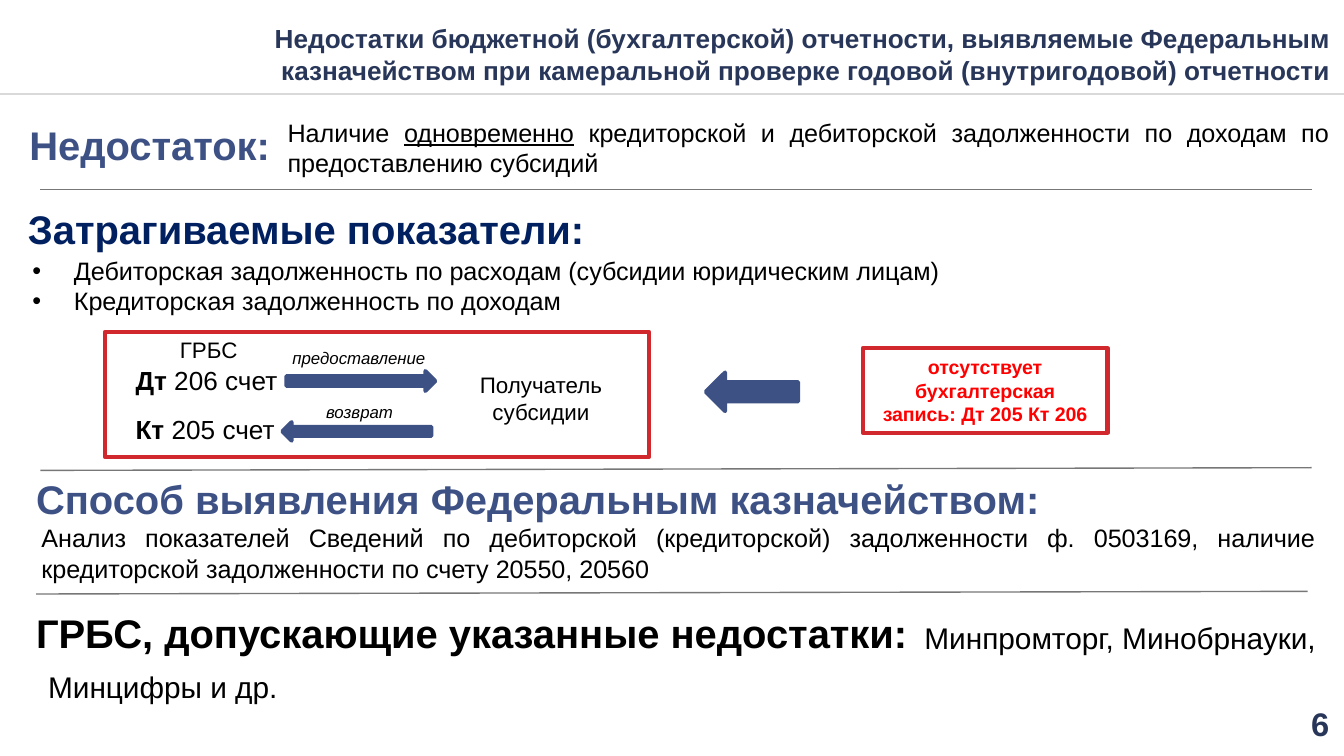
from dataclasses import dataclass

from lxml import etree
from pptx import Presentation
from pptx.dml.color import RGBColor
from pptx.enum.shapes import MSO_CONNECTOR, MSO_SHAPE as Shape
from pptx.enum.text import MSO_ANCHOR as Anchor, PP_ALIGN as Align
from pptx.oxml.ns import qn
from pptx.util import Inches, Pt


@dataclass(frozen=True)
class Theme:
    font: str = "Arial"
    black: str = "000000"
    white: str = "FFFFFF"
    blue: str = "3D5185"
    navy: str = "002060"
    header: str = "283659"
    frame: str = "D1282E"
    alert: str = "FF0000"
    rule: str = "777777"
    header_rule: str = "D9D9D9"
    heading_size: float = 21.4
    number_size: float = 17.5
    list_size: float = 16
    header_size: float = 14
    body_size: float = 13.5
    label_size: float = 12
    alert_size: float = 10.5
    caption_size: float = 9


THEME = Theme()


def color(value):
    return RGBColor.from_string(value)


def write_text(frame, *paragraphs, size=THEME.body_size, fill=THEME.black, bold=False,
               italic=False, align=Align.LEFT, bullet=False):
    """Each paragraph is a string or a list of (text, font overrides) runs."""
    for index, content in enumerate(paragraphs):
        paragraph = frame.paragraphs[0] if index == 0 else frame.add_paragraph()
        paragraph.alignment = align
        if bullet:
            properties = paragraph._p.get_or_add_pPr()
            properties.set("marL", str(Inches(0.31)))
            properties.set("indent", str(-Inches(0.31)))
            etree.SubElement(properties, qn("a:buFont")).set("typeface", THEME.font)
            etree.SubElement(properties, qn("a:buChar")).set("char", "•")
        runs = [(content, {})] if isinstance(content, str) else content
        for text, overrides in runs:
            run = paragraph.add_run()
            run.text = text
            font = run.font
            font.name, font.size = THEME.font, Pt(size)
            font.bold, font.italic = bold, italic
            font.color.rgb = color(fill)
            for name, value in overrides.items():
                setattr(font, name, value)


class SlideBuilder:
    def __init__(self, slide, theme):
        self.slide = slide
        self.theme = theme

    def text(self, left, top, width, height, *paragraphs, inset=True, wrap=True, **style):
        box = self.slide.shapes.add_textbox(
            Inches(left), Inches(top), Inches(width), Inches(height))
        frame = box.text_frame
        frame.word_wrap = wrap
        if not inset:
            frame.margin_left = frame.margin_top = 0
            frame.margin_right = frame.margin_bottom = 0
        write_text(frame, *paragraphs, **style)

    def heading(self, left, top, width, text, fill, wrap=True):
        self.text(left, top, width, 0.46, text, wrap=wrap,
                  size=self.theme.heading_size, fill=fill, bold=True)

    def rule(self, x1, y1, x2, y2, stroke, width=0.75):
        line = self.slide.shapes.add_connector(
            MSO_CONNECTOR.STRAIGHT, Inches(x1), Inches(y1), Inches(x2), Inches(y2))
        line.line.color.rgb = color(stroke)
        line.line.width = Pt(width)
        etree.SubElement(line._element.spPr, qn("a:effectLst"))

    def shape(self, kind, left, top, width, height, stroke, line_width, fill=None):
        shape = self.slide.shapes.add_shape(
            kind, Inches(left), Inches(top), Inches(width), Inches(height))
        shape.shadow.inherit = False
        shape.line.color.rgb = color(stroke)
        shape.line.width = Pt(line_width)
        if fill:
            shape.fill.solid()
            shape.fill.fore_color.rgb = color(fill)
        else:
            shape.fill.background()
        return shape

    def arrow(self, kind, left, top, width, height, rotation=0):
        shape = self.shape(kind, left, top, width, height, self.theme.blue, 2, self.theme.blue)
        shape.rotation = rotation

    def frame(self, left, top, width, height, fill=None):
        return self.shape(Shape.RECTANGLE, left, top, width, height,
                          self.theme.frame, 2.25, fill)


def add_header(builder):
    builder.rule(0, 0.7, 10, 0.7, THEME.header_rule, 1)
    builder.text(0.92, 0.12, 9.08, 0.57,
                 "Недостатки бюджетной (бухгалтерской) отчетности, выявляемые Федеральным "
                 "казначейством при камеральной проверке годовой (внутригодовой) отчетности",
                 size=THEME.header_size, fill=THEME.header, bold=True, align=Align.RIGHT)
    builder.text(9.67, 5.24, 0.22, 0.29, "6", inset=False, size=THEME.number_size,
                 fill=THEME.header, bold=True, align=Align.RIGHT)


def add_sections(builder):
    for left, start, right, end in ((0.3, 1.41, 9.76, 1.41), (0.3, 3.5, 9.76, 3.48),
                                    (0.27, 4.42, 9.73, 4.4)):
        builder.rule(left, start, right, end, THEME.rule)

    builder.heading(0.12, 0.85, 2.04, "Недостаток:", THEME.blue)
    builder.text(2.14, 0.87, 7.75, 0.32,
                 [("Наличие ", {}), ("одновременно", {"underline": True}),
                  (" кредиторской и дебиторской задолженности по доходам "
                   "по предоставлению субсидий", {})],
                 inset=False, align=Align.JUSTIFY)

    builder.heading(0.11, 1.47, 5.08, "Затрагиваемые показатели:", THEME.navy)
    builder.text(0.24, 1.9, 9.52, 0.46,
                 "Дебиторская задолженность по расходам (субсидии юридическим лицам)",
                 "Кредиторская задолженность по доходам",
                 inset=False, bullet=True)

    builder.heading(0.17, 3.48, 7.75, "Способ выявления Федеральным казначейством:",
                    THEME.blue, wrap=False)
    builder.text(0.21, 3.84, 9.68, 0.56,
                 "Анализ показателей Сведений по дебиторской (кредиторской) задолженности "
                 "ф. 0503169, наличие кредиторской задолженности по счету 20550, 20560",
                 align=Align.JUSTIFY)

    builder.heading(0.17, 4.48, 6.76, "ГРБС, допускающие указанные недостатки:",
                    THEME.black, wrap=False)
    builder.text(6.78, 4.56, 3.22, 0.37, "Минпромторг, Минобрнауки,", size=THEME.list_size)
    builder.text(0.26, 4.93, 5.12, 0.37, "Минцифры и др.", size=THEME.list_size)


def add_subsidy_scheme(builder):
    builder.frame(0.78, 2.47, 4.05, 0.93)
    builder.text(1.24, 2.45, 0.7, 0.3, "ГРБС", size=THEME.label_size)
    builder.text(3.37, 2.71, 1.31, 0.5, "Получатель субсидии",
                 size=THEME.label_size, align=Align.CENTER)
    for top, side, account in ((2.66, "Дт", "206"), (3.03, "Кт", "205")):
        builder.text(0.91, top, 1.38, 0.34,
                     [(side, {"bold": True}), (f" {account} счет", {})],
                     size=THEME.header_size)
    for left, top, width, caption in ((2.06, 2.54, 1.22, "предоставление"),
                                      (2.1, 2.94, 1.15, "возврат")):
        builder.text(left, top, width, 0.25, caption, size=THEME.caption_size,
                     italic=True, align=Align.CENTER)

    builder.arrow(Shape.RIGHT_ARROW, 2.13, 2.76, 1.11, 0.15)
    builder.arrow(Shape.RIGHT_ARROW, 2.1, 3.14, 1.11, 0.14, rotation=180)
    builder.arrow(Shape.DOWN_ARROW, 5.45, 2.57, 0.29, 0.69, rotation=90)

    missing_entry = builder.frame(6.42, 2.59, 1.82, 0.63, THEME.white).text_frame
    missing_entry.word_wrap = True
    missing_entry.vertical_anchor = Anchor.MIDDLE
    write_text(missing_entry, "отсутствует бухгалтерская запись: Дт 205 Кт 206",
               size=THEME.alert_size, fill=THEME.alert, bold=True, align=Align.CENTER)


def main():
    presentation = Presentation()
    presentation.slide_width = Inches(10)
    presentation.slide_height = presentation.slide_width * 9 // 16
    slide = presentation.slides.add_slide(presentation.slide_layouts[6])
    builder = SlideBuilder(slide, THEME)
    add_header(builder)
    add_sections(builder)
    add_subsidy_scheme(builder)
    presentation.save("out.pptx")


if __name__ == "__main__":
    main()
